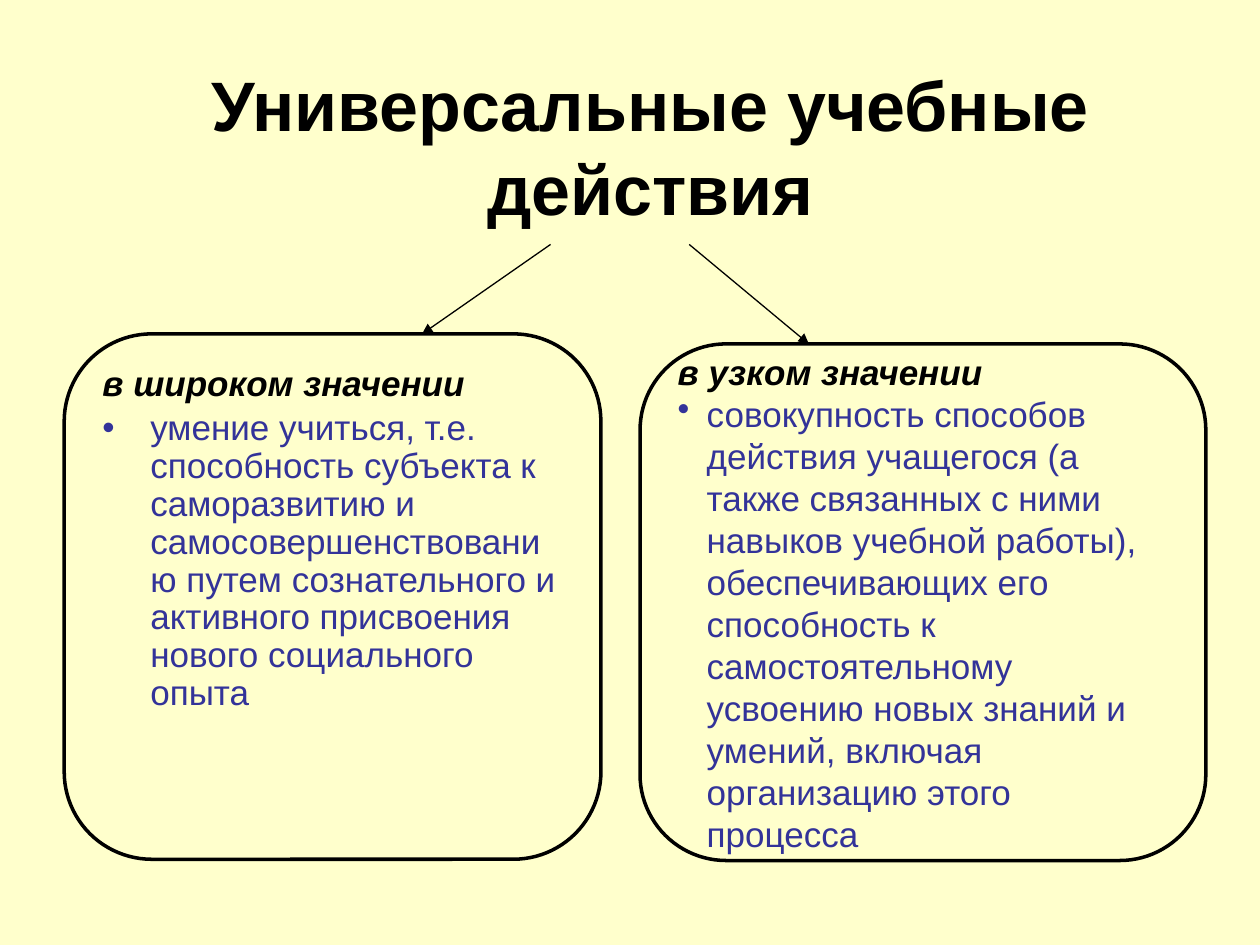
import pptx
import pptx.dml.color
import pptx.enum.shapes
import pptx.enum.text
import pptx.oxml
import pptx.oxml.ns
import pptx.util

CREAM = pptx.dml.color.RGBColor(0xFF, 0xFF, 0xCC)
BLACK = pptx.dml.color.RGBColor(0x00, 0x00, 0x00)
INDIGO = pptx.dml.color.RGBColor(0x33, 0x33, 0x99)
FONT = "Arial"
COLUMNS, ROWS = 100, 75
ALIGN = pptx.enum.text.PP_ALIGN
ANCHOR = pptx.enum.text.MSO_ANCHOR


def add_xml(parent, tag, content="", **attributes):
    values = "".join(f' {name}="{value}"' for name, value in attributes.items())
    namespace = pptx.oxml.ns.nsdecls("a")
    element = pptx.oxml.parse_xml(f"<a:{tag} {namespace}{values}>{content}</a:{tag}>")
    parent.append(element)
    return element


def write(para, text, size=20, color=BLACK, bold=False, italic=False,
          align=ALIGN.LEFT, spacing=1.0, before=0, indent=0, hanging=0, bullet=None):
    para.alignment = align
    para.line_spacing = spacing
    para.space_before = pptx.util.Pt(before)
    properties = para._p.get_or_add_pPr()
    properties.set("marL", str(pptx.util.Inches(indent)))
    properties.set("indent", str(-pptx.util.Inches(hanging)))
    if bullet:
        add_xml(properties, "buChar", char=bullet)
    else:
        add_xml(properties, "buNone")
    span = para.add_run()
    span.text = text
    span.font.name = FONT
    span.font.size = pptx.util.Pt(size)
    span.font.bold = bold
    span.font.italic = italic
    span.font.color.rgb = color


class SlideBuilder:
    def __init__(self, deck):
        self.column = deck.slide_width / COLUMNS
        self.row = deck.slide_height / ROWS
        self.slide = deck.slides.add_slide(deck.slide_layouts[1])
        self.slide.background.fill.solid()
        self.slide.background.fill.fore_color.rgb = CREAM

    def point(self, column, row):
        return round(column * self.column), round(row * self.row)

    def place(self, box, left, top, width, height, anchor):
        box.left, box.top = self.point(left, top)
        box.width, box.height = self.point(width, height)
        frame = box.text_frame
        frame.word_wrap = True
        frame.auto_size = pptx.enum.text.MSO_AUTO_SIZE.NONE
        frame.vertical_anchor = anchor
        return frame

    def title(self, text, *area):
        frame = self.place(self.slide.shapes.title, *area, ANCHOR.TOP)
        write(frame.paragraphs[0], text, size=40, bold=True, align=ALIGN.CENTER)

    def fill_card(self, box, area, anchor, heading, meaning, hanging, **spacing):
        frame = self.place(box, *area, anchor)
        box.fill.background()
        box.line.color.rgb = BLACK
        box.line.width = pptx.util.Pt(2)
        write(frame.paragraphs[0], heading, bold=True, italic=True, **spacing)
        write(frame.add_paragraph(), meaning, color=INDIGO, bullet="•",
              indent=hanging, hanging=hanging, **spacing)

    def body_card(self, heading, meaning, *area):
        box = self.slide.placeholders[1]
        self.place(box, *area, ANCHOR.TOP)
        add_xml(box._element.spPr, "prstGeom", "<a:avLst/>", prst="roundRect")
        self.fill_card(box, area, ANCHOR.TOP, heading, meaning, 0.38,
                       spacing=0.9, before=4)

    def shape_card(self, heading, meaning, *area):
        box = self.slide.shapes.add_shape(
            pptx.enum.shapes.MSO_SHAPE.ROUNDED_RECTANGLE, 0, 0, 0, 0)
        box.shadow.inherit = False
        self.fill_card(box, area, ANCHOR.MIDDLE, heading, meaning, 0.23)

    def arrow(self, start, end):
        line = self.slide.shapes.add_connector(
            pptx.enum.shapes.MSO_CONNECTOR.STRAIGHT,
            *self.point(*start), *self.point(*end))
        line.line.color.rgb = BLACK
        line.line.width = pptx.util.Pt(0.75)
        add_xml(line.line._get_or_add_ln(), "tailEnd", type="triangle")
        add_xml(line._element.spPr, "effectLst")


def main():
    deck = pptx.Presentation()
    deck.slide_width = pptx.util.Inches(10)
    deck.slide_height = pptx.util.Inches(7.5)
    page = SlideBuilder(deck)
    page.title("Универсальные учебные действия", 7.5, 4.4, 88.2, 14.3)
    page.body_card(
        "в широком значении",
        "умение учиться, т.е. способность субъекта к саморазвитию и "
        "самосовершенствованию путем сознательного и активного присвоения "
        "нового социального опыта",
        5.1, 26.5, 42.6, 41.7)
    page.shape_card(
        "в узком значении",
        "совокупность способов действия учащегося (а также связанных с ними "
        "навыков учебной работы), обеспечивающих его способность к "
        "самостоятельному усвоению новых знаний и умений, включая "
        "организацию этого процесса",
        50.8, 27.3, 44.9, 41)
    page.arrow((43.7, 19.4), (33.5, 26.5))
    page.arrow((54.7, 19.4), (64.2, 27.3))
    deck.save("out.pptx")


if __name__ == "__main__":
    main()
